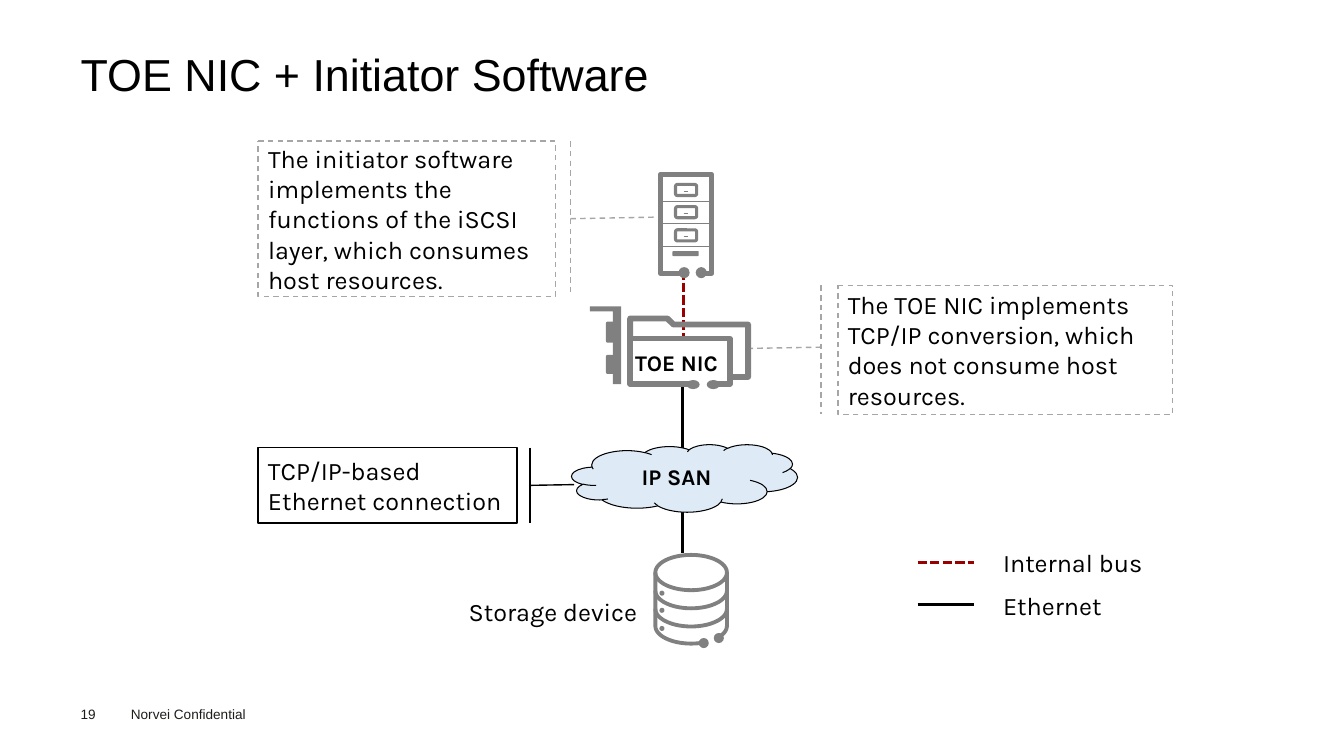
from math import cos, radians, sin

from lxml.etree import SubElement
from pptx import Presentation
from pptx.dml.color import RGBColor
from pptx.enum.dml import MSO_LINE
from pptx.enum.shapes import MSO_CONNECTOR, MSO_SHAPE
from pptx.enum.text import MSO_ANCHOR, PP_ALIGN
from pptx.oxml.ns import qn
from pptx.util import Pt

PX = 9144  # 100 px to the inch
HUES = {"black": "000000", "ink": "1D1D1B", "gray": "808080",
        "pale": "A6A6A6", "red": "990000", "sky": "DEEBF7"}

deck = Presentation()
deck.slide_width, deck.slide_height = 1333 * PX, 750 * PX
slide = deck.slides.add_slide(deck.slide_layouts[6])
shapes = slide.shapes


def paint(item, fill=None, line=None, thick=1, dash=None):
    """Set fill and line by colour name, and drop the shadow."""
    if hasattr(item, "fill"):
        item.shadow.inherit = False
        if fill:
            item.fill.solid()
            item.fill.fore_color.rgb = RGBColor.from_string(HUES[fill])
        else:
            item.fill.background()
    else:
        SubElement(item._element.spPr, qn("a:effectLst"))
    if line:
        item.line.color.rgb = RGBColor.from_string(HUES[line])
        item.line.width = Pt(thick)
        item.line.dash_style = dash
    else:
        item.line.fill.background()


def write(item, text, size, hue="black", face="Karla", bold=False,
          wrap=True, anchor=MSO_ANCHOR.TOP, align=PP_ALIGN.LEFT, space=None):
    frame = item.text_frame
    frame.word_wrap = wrap
    frame.vertical_anchor = anchor
    para = frame.paragraphs[0]
    para.alignment, para.line_spacing = align, space
    run = para.add_run()
    run.text = text
    for key, val in {"name": face, "size": Pt(size), "bold": bold}.items():
        setattr(run.font, key, val)
    run.font.color.rgb = RGBColor.from_string(HUES[hue])


# Title and footer
arial = {"face": "Arial", "hue": "ink", "size": 9.7}
for text, box, flush, form in [
    ("TOE NIC + Initiator Software", (80, 49, 1173, 54), True,
     {"face": "Arial", "size": 32, "space": 0.9, "anchor": MSO_ANCHOR.MIDDLE}),
    ("19", (80, 700, 55, 16), True, arial),
    ("Norvei Confidential", (120, 695, 160, 27), False, arial),
]:
    item = shapes.add_textbox(*[v * PX for v in box])
    if flush:
        for side in ("left", "top", "right", "bottom"):
            setattr(item.text_frame, f"margin_{side}", 0)
    write(item, text, **form)

# Callouts: the leader runs from the accent bar to its target
for text, box, ends, hue, dash in [
    ("The initiator software implements the functions of the iSCSI layer, "
     "which consumes host resources.", (256, 140, 295, 154),
     (0.5, 1.05, 0.49, 1.34), "pale", MSO_LINE.DASH),
    ("TCP/IP-based Ethernet connection", (256, 444, 257, 75),
     (0.5, 1.05, 0.49, 1.22), "black", None),
    ("The TOE NIC implements TCP/IP conversion, which does not consume "
     "host resources.", (831, 283, 332, 128),
     (0.48, -0.05, 0.49, -0.27), "pale", MSO_LINE.DASH),
]:
    note = shapes.add_shape(MSO_SHAPE.LINE_CALLOUT_1_BORDER_AND_ACCENT_BAR,
                            *[v * PX for v in box])
    for i, end in enumerate(ends):
        note.adjustments[i] = end
    paint(note, line=hue, dash=dash)
    write(note, text, 18, anchor=MSO_ANCHOR.MIDDLE)

# Links, legend keys, and the cabinet's dividers and knobs
drawers = [181 + 45 * i // 2 for i in range(3)]
bus = ("red", 2.25, MSO_LINE.SQUARE_DOT)
ether = ("black", 2.25, None)
thin = ("gray", 0.75, None)
lines = [((910, 558, 966, 558), bus), ((910, 600, 966, 600), ether),
         ((678, 268, 678, 333), bus), ((677, 384, 677, 549), ether)]
for y in drawers:
    lines += [((655, y + 19, 706, y + 19), thin),
              ((678, y + 9, 682, y + 9), thin)]
for ends, (hue, thick, dash) in lines:
    link = shapes.add_connector(MSO_CONNECTOR.STRAIGHT,
                                *[v * PX for v in ends])
    paint(link, line=hue, thick=thick, dash=dash)

cloud = shapes.add_shape(MSO_SHAPE.CLOUD,
                         *[v * PX for v in (567, 441, 224, 67)])
paint(cloud, "sky", "black", 0.75)
write(cloud, "IP SAN", 16, bold=True, anchor=MSO_ANCHOR.MIDDLE,
      align=PP_ALIGN.CENTER)

# Icon outlines: points, line width (0 for a solid area), closed or not
arcs = [[(685.5 + 35.5 * cos(radians(a)), y + 17.5 * sin(radians(a)))
         for a in range(start, stop + 1, 5)]
        for y, start, stop in [(568, 0, 355), (586, 0, 180), (604, 0, 180),
                               (621, 75, 180), (621, 0, 40)]]
rim, *bands, left, right = arcs
outlines = [
    ([(676, 271), (655, 271), (655, 173), (706, 173), (706, 271),
      (694, 271)], 3.6, False),
    ([(625, 336), (625, 316), (662, 316), (668, 322), (742, 322),
      (742, 374), (726, 374)], 4.2, False),
    ([(690, 381), (625, 381), (625, 336), (724, 336), (724, 381),
      (706, 381)], 4, False),
    ([(585, 304), (616, 304), (616, 381), (608, 381), (608, 309),
      (585, 309)], 0, True),
    (rim, 2.75, True),
    *[(band, 2.75, False) for band in bands],
    (left + [(650, 568)], 2.75, False),
    ([(721, 568)] + right, 2.75, False),
]
for points, thick, close in outlines:
    spots = [(x * PX, y * PX) for x, y in points]
    pen = shapes.build_freeform(*spots[0], scale=1.0)
    pen.add_line_segments(spots[1:], close=close)
    if thick:
        paint(pen.convert_to_shape(), line="gray", thick=thick)
    else:
        paint(pen.convert_to_shape(), "gray")

# Icon details: drawer fronts, solid bars, then dots
round_box, oval = MSO_SHAPE.ROUNDED_RECTANGLE, MSO_SHAPE.OVAL
parts = [(round_box, (670, y + 2, 21, 11), 2.2) for y in drawers]
parts += [(round_box, box, 0) for box in
          [(667, 249, 26, 5), (601, 319, 11, 21), (601, 352, 11, 19)]]
parts += [(oval, box, 0) for box in
          [(673, 265, 11, 11), (690, 265, 11, 11),
           (681, 377, 13, 9), (701, 377, 13, 9),
           (693, 633, 10, 10), (708, 628, 10, 10),
           *[(654, y, 5, 5) for y in (586, 603, 621)]]]
for kind, box, thick in parts:
    part = shapes.add_shape(kind, *[v * PX for v in box])
    if thick:
        paint(part, line="gray", thick=thick)
    else:
        paint(part, "gray")

# Labels
for text, box, form in [
    ("Internal bus", (985, 526, 197, 49), {"size": 18, "space": 1.4}),
    ("Ethernet", (985, 569, 119, 49), {"size": 18, "space": 1.4}),
    ("Storage device", (455, 575, 218, 49), {"size": 18, "space": 1.4}),
    ("TOE NIC", (620, 341, 105, 37),
     {"size": 16, "bold": True, "wrap": False}),
]:
    write(shapes.add_textbox(*[v * PX for v in box]), text, **form)

deck.save("out.pptx")
